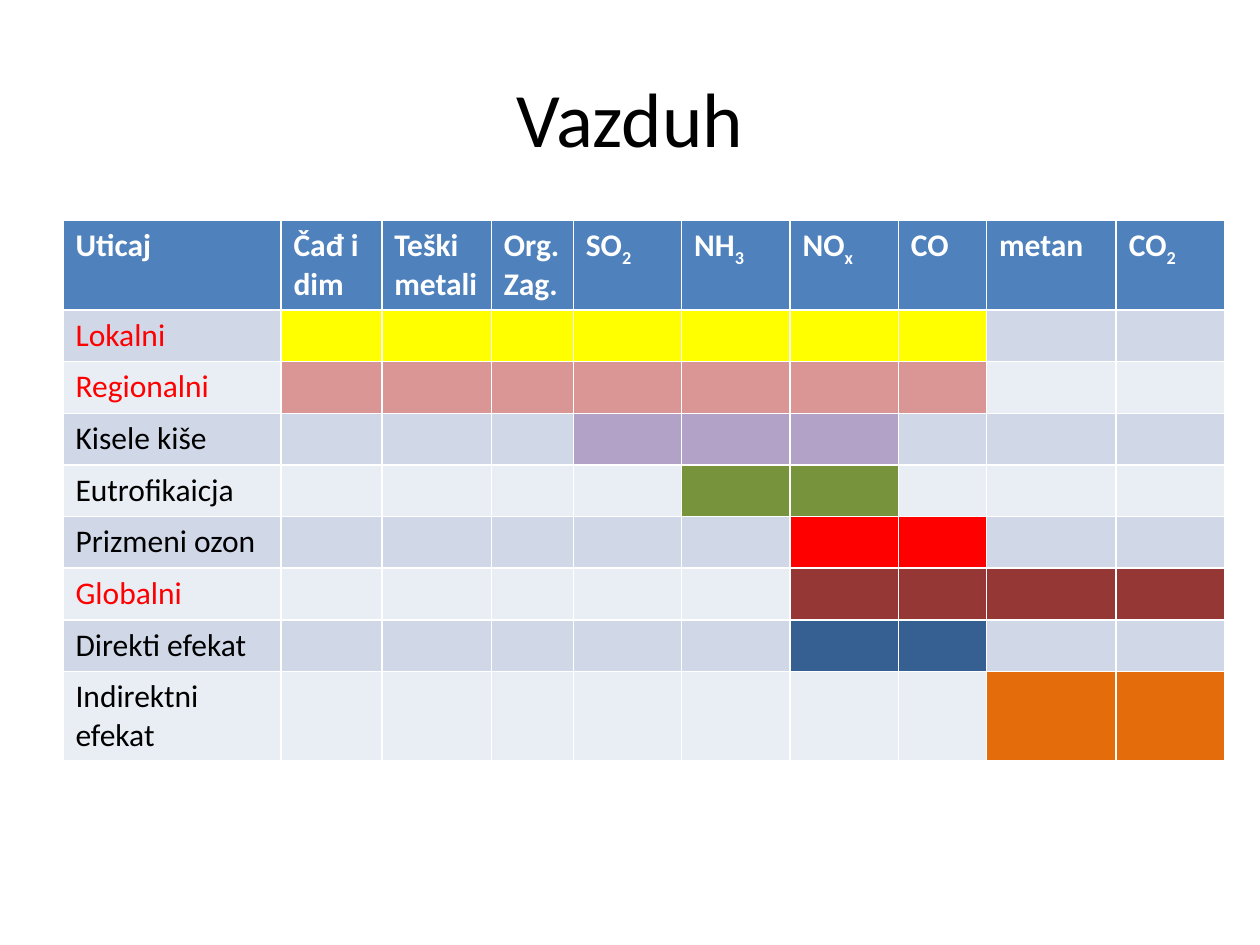
"""Build the slide "Vazduh": a table of air pollutants and their impacts."""
from pptx import Presentation
from pptx.dml.color import RGBColor
from pptx.enum.text import MSO_ANCHOR, PP_ALIGN
from pptx.util import Inches, Pt

MIDDLE = MSO_ANCHOR.MIDDLE
CENTER = PP_ALIGN.CENTER

FONT = "Calibri"
BLACK = RGBColor(0x00, 0x00, 0x00)
WHITE = RGBColor(0xFF, 0xFF, 0xFF)
RED = RGBColor(0xFF, 0x00, 0x00)
YELLOW = RGBColor(0xFF, 0xFF, 0x00)
PINK = RGBColor(0xD9, 0x96, 0x94)
PURPLE = RGBColor(0xB3, 0xA2, 0xC7)
GREEN = RGBColor(0x77, 0x93, 0x3C)
MAROON = RGBColor(0x95, 0x37, 0x35)
NAVY = RGBColor(0x37, 0x60, 0x92)
ORANGE = RGBColor(0xE4, 0x6C, 0x0A)
HEADER_BLUE = RGBColor(0x4F, 0x81, 0xBD)
BANDS = [RGBColor(0xD0, 0xD8, 0xE8), RGBColor(0xE9, 0xED, 0xF4)]

HEADERS = [
    ("Uticaj", ""), ("Čađ i dim", ""), ("Teški metali", ""), ("Org. Zag.", ""),
    ("SO", "2"), ("NH", "3"), ("NO", "x"), ("CO", ""), ("metan", ""), ("CO", "2"),
]
COL_WIDTHS = [1.73, 0.8, 0.87, 0.65, 0.86, 0.86, 0.86, 0.7, 1.03, 0.86]
IMPACTS = [
    ("Lokalni", RED, YELLOW, 1, 7),
    ("Regionalni", RED, PINK, 1, 7),
    ("Kisele kiše", BLACK, PURPLE, 4, 6),
    ("Eutrofikaicja", BLACK, GREEN, 5, 6),
    ("Prizmeni ozon", BLACK, RED, 6, 7),
    ("Globalni", RED, MAROON, 6, 9),
    ("Direkti efekat", BLACK, NAVY, 6, 7),
    ("Indirektni efekat", BLACK, ORANGE, 8, 9),
]


def fill_cell(cell, color):
    cell.fill.solid()
    cell.fill.fore_color.rgb = color


def format_font(p, size, color, bold=False):
    p.font.name = FONT
    p.font.size = Pt(size)
    p.font.bold = bold
    p.font.color.rgb = color


prs = Presentation()
prs.slide_width = Inches(10)
prs.slide_height = Inches(7.5)
s = prs.slides.add_slide(prs.slide_layouts[5])

title = s.shapes.title
title.left, title.top = Inches(0.5), Inches(0.3)
title.width, title.height = Inches(9), Inches(1.25)
tf = title.text_frame
tf.text = "Vazduh"
tf.vertical_anchor = MIDDLE
p = tf.paragraphs[0]
p.alignment = CENTER
format_font(p, 44, BLACK)

table = s.shapes.add_table(
    len(IMPACTS) + 1, len(HEADERS),
    Inches(0.5), Inches(1.75), Inches(9.22), Inches(4.24),
).table
for column, width in zip(table.columns, COL_WIDTHS):
    column.width = Inches(width)
for row in table.rows:
    row.height = Inches(0.41)
table.rows[0].height = Inches(0.5)

for col, (name, subscript) in enumerate(HEADERS):
    cell = table.cell(0, col)
    fill_cell(cell, HEADER_BLUE)
    p = cell.text_frame.paragraphs[0]
    format_font(p, 18, WHITE, bold=True)
    p.add_run().text = name
    if subscript:
        r = p.add_run()
        r.text = subscript
        r.font._element.set("baseline", "-25000")

for row, (name, text_color, mark, first, last) in enumerate(IMPACTS, start=1):
    for col in range(len(HEADERS)):
        band = BANDS[(row - 1) % 2]
        fill_cell(table.cell(row, col), mark if first <= col <= last else band)
    p = table.cell(row, 0).text_frame.paragraphs[0]
    p.text = name
    format_font(p, 18, text_color)

prs.save("out.pptx")
